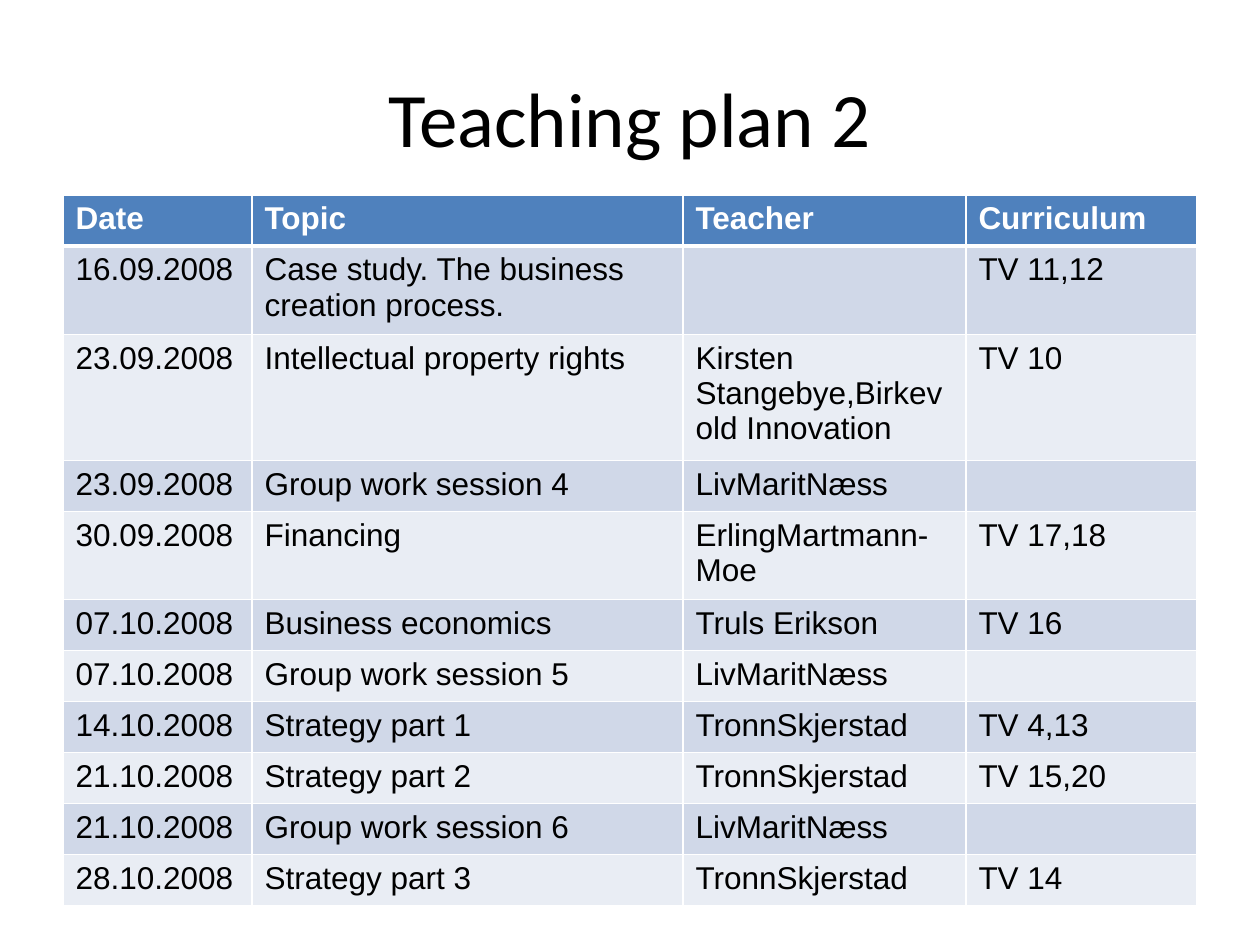
from lxml import etree
from pptx import Presentation
from pptx import util as u
from pptx.dml.color import RGBColor
from pptx.enum import text
from pptx.oxml.ns import qn

HEADER = ["Date", "Topic", "Teacher", "Curriculum"]
SESSIONS = [
    ["16.09.2008", "Case study. The business creation process.", "", "TV 11,12"],
    ["23.09.2008", "Intellectual property rights",
     "Kirsten Stangebye,Birkevold Innovation", "TV 10"],
    ["23.09.2008", "Group work session 4", "LivMaritNæss", ""],
    ["30.09.2008", "Financing", "ErlingMartmann-Moe", "TV 17,18"],
    ["07.10.2008", "Business economics", "Truls Erikson", "TV 16"],
    ["07.10.2008", "Group work session 5", "LivMaritNæss", ""],
    ["14.10.2008", "Strategy part 1", "TronnSkjerstad", "TV 4,13"],
    ["21.10.2008", "Strategy part 2", "TronnSkjerstad", "TV 15,20"],
    ["21.10.2008", "Group work session 6", "LivMaritNæss", ""],
    ["28.10.2008", "Strategy part 3", "TronnSkjerstad", "TV 14"],
]


def px(n):
    return u.Inches(n / 126)


def color(value):
    return RGBColor.from_string(value)


class Deck:
    title_font, body_font = "Calibri", "Arial"
    ink, paper = "000000", "FFFFFF"
    header_fill, bands = "4F81BD", ("D0D8E8", "E9EDF4")

    def __init__(self, width, height):
        self.prs = Presentation()
        self.prs.slide_width, self.prs.slide_height = px(width), px(height)
        self.s = self.prs.slides.add_slide(self.prs.slide_layouts[6])

    def set_text(self, p, value, font, size, ink, bold=False):
        p.text = value
        f = p.font
        f.name, f.size, f.bold = font, u.Pt(size), bold
        f.color.rgb = color(ink)

    def title(self, value, x, y, w, h):
        tf = self.s.shapes.add_textbox(px(x), px(y), px(w), px(h)).text_frame
        tf.word_wrap = True
        tf.vertical_anchor = text.MSO_ANCHOR.MIDDLE
        p = tf.paragraphs[0]
        p.alignment = text.PP_ALIGN.CENTER
        self.set_text(p, value, self.title_font, 44, self.ink)

    def borders(self, cell, top, bottom):
        tcPr = cell._tc.get_or_add_tcPr()
        widths = {"lnL": 1, "lnR": 1, "lnT": top, "lnB": bottom}
        for i, (tag, width) in enumerate(widths.items()):
            ln = etree.Element(qn(f"a:{tag}"), w=str(u.Pt(width)))
            fill = etree.SubElement(ln, qn("a:solidFill"))
            etree.SubElement(fill, qn("a:srgbClr"), val=self.paper)
            tcPr.insert(i, ln)

    def table(self, rows, x, y, widths, row_height):
        table = self.s.shapes.add_table(
            len(rows), len(widths), px(x), px(y),
            px(sum(widths)), px(row_height * len(rows))).table
        for column, width in zip(table.columns, widths):
            column.width = px(width)
        for i, row in enumerate(rows):
            head = i == 0
            table.rows[i].height = px(row_height)
            for j, value in enumerate(row):
                cell = table.cell(i, j)
                cell.fill.solid()
                cell.fill.fore_color.rgb = color(
                    self.header_fill if head else self.bands[(i - 1) % 2])
                self.borders(cell, 3 if i == 1 else 1, 3 if head else 1)
                self.set_text(cell.text_frame.paragraphs[0], value, self.body_font,
                              18, self.paper if head else self.ink, head)


def main():
    deck = Deck(1260, 945)
    deck.title("Teaching plan 2", 63, 38, 1134, 158)
    deck.table([HEADER] + SESSIONS, 63, 195, [189, 431, 283, 231], 51)
    deck.prs.save("out.pptx")


if __name__ == "__main__":
    main()
